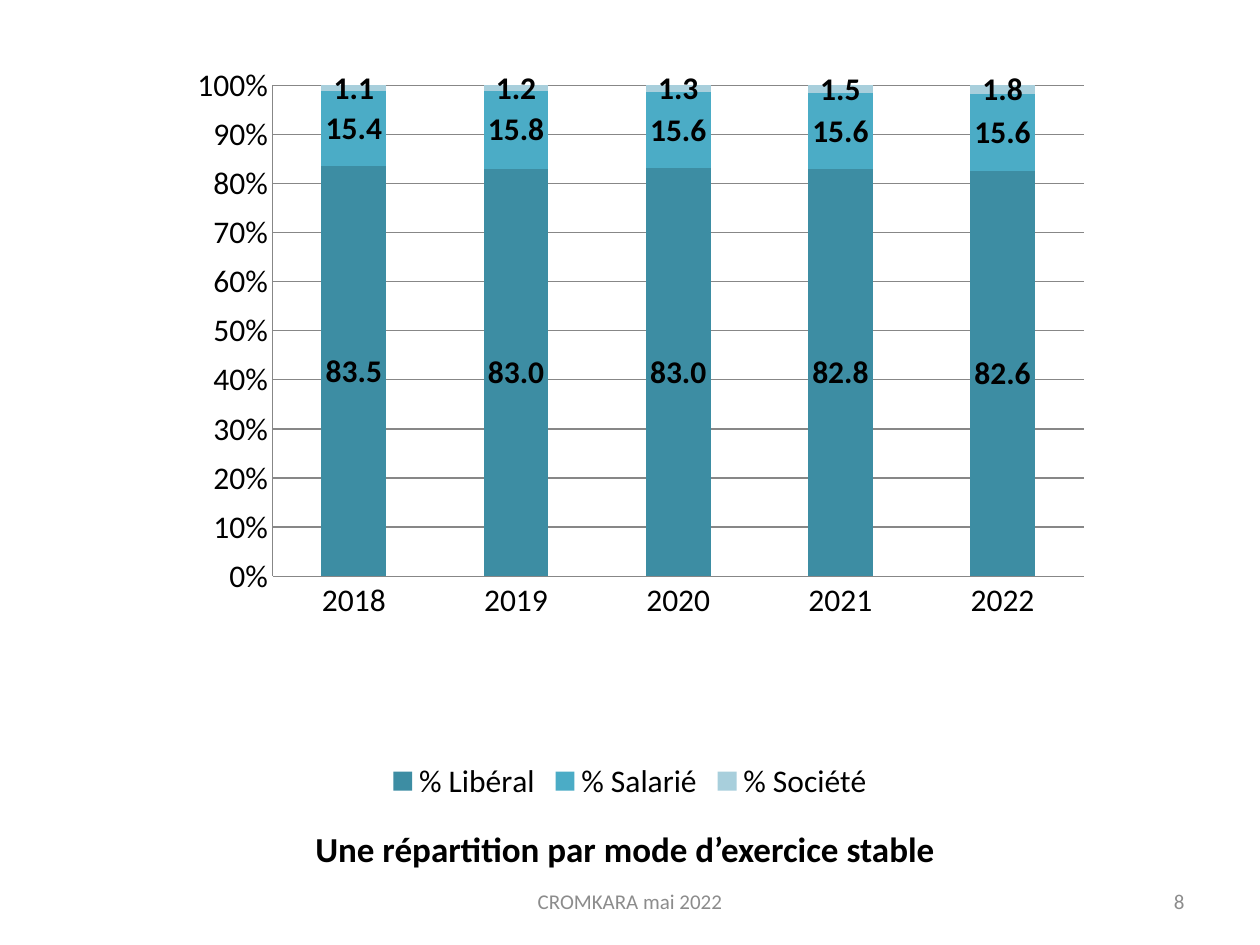
from lxml.etree import SubElement
from pptx import Presentation
from pptx.chart.data import CategoryChartData
from pptx.dml.color import RGBColor
from pptx.enum.chart import XL_CHART_TYPE, XL_LEGEND_POSITION, XL_TICK_MARK
from pptx.enum.text import MSO_ANCHOR, PP_ALIGN
from pptx.oxml.ns import qn
from pptx.util import Cm, Pt

FONT = "Calibri"
BLACK = RGBColor(0x00, 0x00, 0x00)
GREY = RGBColor(0x8C, 0x8C, 0x8C)
AXIS_GREY = RGBColor(0x87, 0x87, 0x87)
DARK_TEAL = RGBColor(0x3D, 0x8D, 0xA3)
TEAL = RGBColor(0x4B, 0xAC, 0xC6)
PALE_TEAL = RGBColor(0xA8, 0xCF, 0xDC)

YEARS = ["2018", "2019", "2020", "2021", "2022"]
PRACTICE_MODES = [
    ("% Libéral", [83.5, 83, 83, 82.8, 82.6], DARK_TEAL),
    ("% Salarié", [15.4, 15.8, 15.6, 15.6, 15.6], TEAL),
    ("% Société", [1.1, 1.2, 1.3, 1.5, 1.8], PALE_TEAL),
]
PLOT_LAYOUT = [
    ("layoutTarget", "inner"), ("xMode", "edge"), ("yMode", "edge"),
    ("x", "0.13"), ("y", "0.06"), ("w", "0.84"), ("h", "0.64"),
]


class SlideBuilder:
    def __init__(self, slide):
        self.slide = slide

    def style_font(self, font, size, color=BLACK, bold=False):
        font.name = FONT
        font.size = Pt(size)
        font.bold = bold
        font.color.rgb = color

    def add_text(self, shape, text, size, color, alignment, anchor, bold=False):
        frame = shape.text_frame
        frame.word_wrap = True
        frame.vertical_anchor = anchor
        paragraph = frame.paragraphs[0]
        paragraph.alignment = alignment
        run = paragraph.add_run()
        run.text = text
        self.style_font(run.font, size, color, bold)

    def title(self, text, left, top, width, height):
        shape = self.slide.shapes.title
        shape.left, shape.top = Cm(left), Cm(top)
        shape.width, shape.height = Cm(width), Cm(height)
        self.add_text(shape, text, 20, BLACK, PP_ALIGN.CENTER, MSO_ANCHOR.BOTTOM, True)

    def footer(self, text, left, width, alignment):
        shape = self.slide.shapes.add_textbox(Cm(left), Cm(17.65), Cm(width), Cm(1.02))
        self.add_text(shape, text, 12, GREY, alignment, MSO_ANCHOR.MIDDLE)

    def stacked_chart(self, categories, rows, left, top, width, height):
        data = CategoryChartData(number_format="General")
        data.categories = categories
        for name, values, color in rows:
            data.add_series(name, values)
        chart = self.slide.shapes.add_chart(
            XL_CHART_TYPE.COLUMN_STACKED_100,
            Cm(left), Cm(top), Cm(width), Cm(height), data,
        ).chart
        self.style_font(chart.font, 18)
        chart.has_title = False
        chart.has_legend = True
        chart.legend.position = XL_LEGEND_POSITION.BOTTOM
        chart.legend.include_in_layout = False
        plot = chart.plots[0]
        plot.gap_width = 150
        plot.overlap = 100
        plot.vary_by_categories = False
        for series, (name, values, color) in zip(plot.series, rows):
            series.format.fill.solid()
            series.format.fill.fore_color.rgb = color
            labels = series.data_labels
            labels.show_value = True
            labels.number_format = "#,##0.0"
            labels.number_format_is_linked = False
            self.style_font(labels.font, 18, bold=True)
        self.style_axes(chart)
        self.place_plot(chart)

    def style_axes(self, chart):
        value_axis = chart.value_axis
        value_axis.has_major_gridlines = True
        value_axis.maximum_scale = 1
        value_axis.minimum_scale = 0
        value_axis.major_unit = 0.1
        value_axis.tick_labels.number_format = "0%"
        value_axis.tick_labels.number_format_is_linked = False
        for axis in (chart.category_axis, value_axis):
            axis.major_tick_mark = XL_TICK_MARK.NONE
            axis.minor_tick_mark = XL_TICK_MARK.NONE
        for part in (chart.category_axis, value_axis, value_axis.major_gridlines):
            part.format.line.color.rgb = AXIS_GREY
            part.format.line.width = Pt(0.75)

    def place_plot(self, chart):
        plot_area = chart.element.find(".//" + qn("c:plotArea"))
        layout = plot_area.find(qn("c:layout"))
        if layout is None:
            layout = SubElement(plot_area, qn("c:layout"))
            plot_area.insert(0, layout)
        manual = SubElement(layout, qn("c:manualLayout"))
        for tag, value in PLOT_LAYOUT:
            SubElement(manual, qn("c:" + tag)).set("val", value)


def main():
    presentation = Presentation()
    presentation.slide_width = Cm(25.4)
    presentation.slide_height = Cm(19.05)
    builder = SlideBuilder(presentation.slides.add_slide(presentation.slide_layouts[5]))
    builder.title("Une répartition par mode d’exercice stable", 0.79, 16.08, 23.62, 1.57)
    builder.stacked_chart(YEARS, PRACTICE_MODES, 2.97, 0.79, 19.46, 15.47)
    builder.footer("8", 18.2, 5.93, PP_ALIGN.RIGHT)
    builder.footer("CROMKARA mai 2022", 8.68, 8.04, PP_ALIGN.CENTER)
    presentation.save("out.pptx")


if __name__ == "__main__":
    main()
